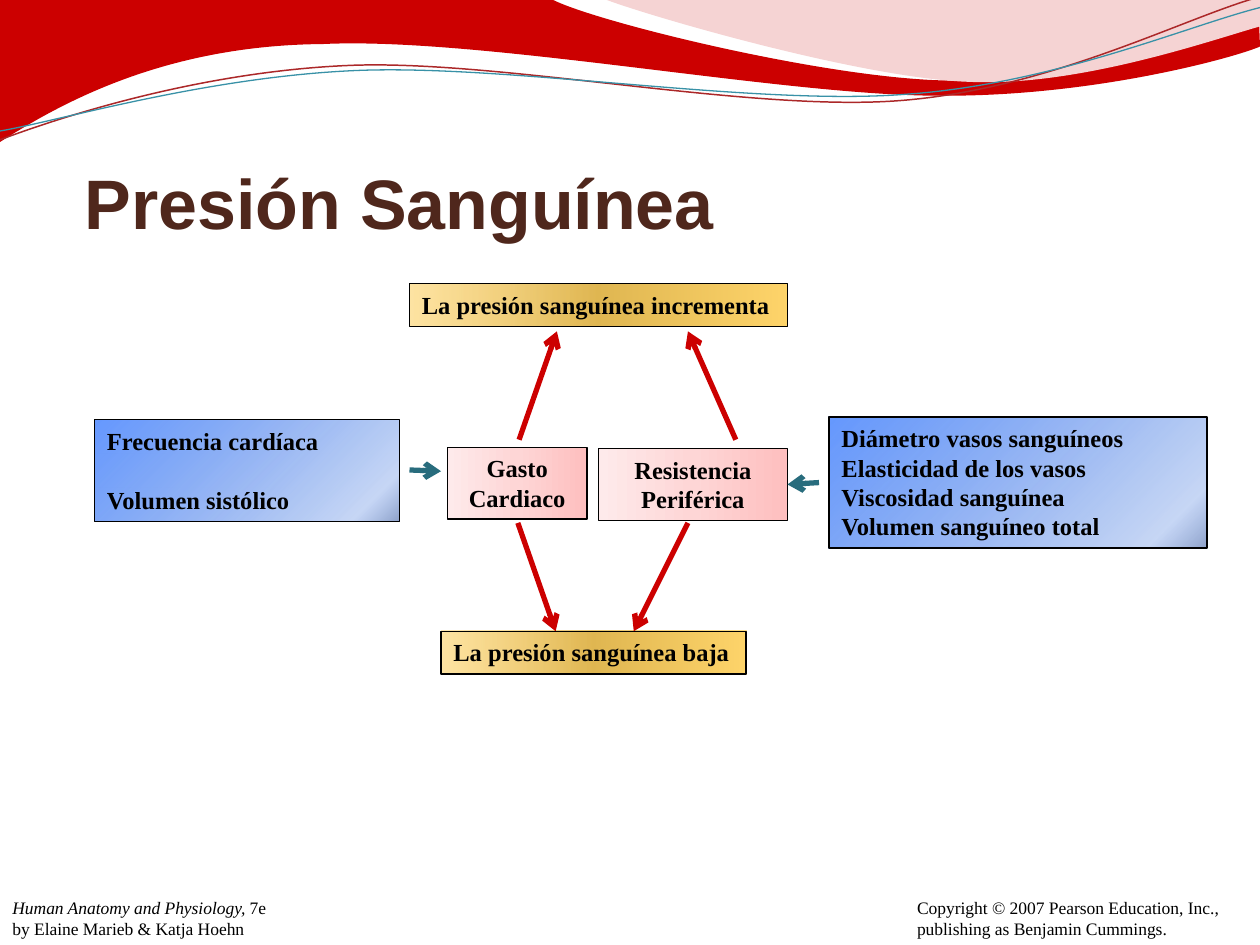
from dataclasses import dataclass

from lxml import etree
from pptx import Presentation
from pptx.dml.color import RGBColor
from pptx.enum.shapes import MSO_CONNECTOR, MSO_SHAPE
from pptx.enum.text import MSO_ANCHOR, PP_ALIGN
from pptx.oxml.ns import qn
from pptx.util import Emu, Pt

PX = 9144  # EMU per px, 100 px to the inch
RECT, STRAIGHT = MSO_SHAPE.RECTANGLE, MSO_CONNECTOR.STRAIGHT
LEFT, CENTER = PP_ALIGN.LEFT, PP_ALIGN.CENTER
TOP, MIDDLE = MSO_ANCHOR.TOP, MSO_ANCHOR.MIDDLE
RIGHT_SIDE = 3


@dataclass(frozen=True)
class Theme:
    red: str = "CC0000"
    pink: str = "F5D3D3"
    thin_red: str = "AC2829"
    thin_teal: str = "3891A7"
    teal: str = "286C7D"
    brown: str = "4F271C"
    black: str = "000000"
    sans: str = "Arial"
    serif: str = "Times New Roman"
    title_size: int = 40
    node_size: int = 14
    footer_size: int = 10
    # gradient stops: position %, colour, opacity %
    blue_stops: tuple = ((0, "35579C", 56), (12, "4C7EE1", 31), (100, "6699FF", 100))
    gold_stops: tuple = ((0, "FED46C", 62), (50, "E0B752", 100), (100, "FFD56B", 100))
    rose_stops: tuple = ((0, "FEBFBF", 100), (50, "FED6D6", 100), (100, "FEEAEB", 100))


T = Theme()


def rgb(color):
    return RGBColor.from_string(color)


def px(*values):
    return [Emu(v * PX) for v in values]


def write(sp, paragraphs, size, font=T.serif, color=T.black, bold=False, align=LEFT,
          anchor=TOP, wrap=True, insets=(10, 5, 10, 5), gap=0):
    """Each paragraph is a list of (text, italic) runs; gap is the space between them."""
    tf = sp.text_frame
    tf.word_wrap, tf.vertical_anchor = wrap, anchor
    tf.margin_left, tf.margin_top, tf.margin_right, tf.margin_bottom = px(*insets)
    for i, runs in enumerate(paragraphs):
        p = tf.add_paragraph() if i else tf.paragraphs[0]
        p.alignment = align
        if i and gap:
            p.space_before = Pt(gap)
        for text, italic in runs:
            r = p.add_run()
            r.text = text
            f = r.font
            f.name, f.size, f.bold, f.italic = font, Pt(size), bold, italic
            f.color.rgb = rgb(color)


def plain(*lines):
    return [[(line, False)] for line in lines]


def set_gradient(sp, stops, angle=None):
    """Linear at the given angle, or radial from the bottom right corner."""
    grad = etree.Element(qn("a:gradFill"), rotWithShape="1")
    gs_list = etree.SubElement(grad, qn("a:gsLst"))
    for pos, color, opacity in stops:
        gs = etree.SubElement(gs_list, qn("a:gs"), pos=str(pos * 1000))
        clr = etree.SubElement(gs, qn("a:srgbClr"), val=color)
        if opacity < 100:
            etree.SubElement(clr, qn("a:alpha"), val=str(opacity * 1000))
    if angle is None:
        radial = etree.SubElement(grad, qn("a:path"), path="circle")
        etree.SubElement(radial, qn("a:fillToRect"), l="100000", t="100000")
    else:
        etree.SubElement(grad, qn("a:lin"), ang=str(angle * 60000), scaled="0")
    sp._element.spPr.find(qn("a:prstGeom")).addnext(grad)


def add_node(slide, box, lines, stops, angle=None, align=LEFT, gap=0):
    sp = slide.shapes.add_shape(RECT, *px(*box))
    sp.shadow.inherit = False
    set_gradient(sp, stops, angle)
    sp.line.color.rgb, sp.line.width = rgb(T.black), Pt(0.75)
    write(sp, plain(*lines), T.node_size, bold=True, align=align, gap=gap)
    return sp


def add_arrow(slide, start, end, color):
    line = slide.shapes.add_connector(STRAIGHT, *px(*start, *end))
    line.line.color.rgb, line.line.width = rgb(color), Pt(3)
    etree.SubElement(line.line._get_or_add_ln(), qn("a:tailEnd"), type="arrow")
    etree.SubElement(line._element.spPr, qn("a:effectLst"))
    return line


def add_curve(slide, origin, start, segments, fill=None, line=None, width=0):
    """A segment of one point is a line, one of three points a Bézier curve."""
    x, y = origin
    points = [(x + a, y + b) for seg in segments for a, b in seg]
    fb = slide.shapes.build_freeform(x + start[0], y + start[1], scale=PX)
    fb.add_line_segments(points, close=fill is not None)
    sp = fb.convert_to_shape()
    sp.shadow.inherit = False
    steps = iter(list(sp._element.iter(qn("a:lnTo"))))
    for seg in segments:
        first = next(steps)
        if len(seg) == 3:
            first.tag = qn("a:cubicBezTo")
            for _ in range(2):
                step = next(steps)
                first.append(step[0])
                step.getparent().remove(step)
    if fill:
        sp.fill.solid()
        sp.fill.fore_color.rgb = rgb(fill)
        sp.line.fill.background()
    else:
        sp.fill.background()
        sp.line.color.rgb, sp.line.width = rgb(line), Pt(width)


def banner(slide, x, y):
    at = (x, y)
    # Filled waves
    add_curve(slide, at, (-1, 0), [
        [(439, 0)], [(475, 18), (662, 64), (757, 64)], [(852, 64), (957, 26), (999, 10)],
        [(1000, 37)], [(982, 45), (869, 77), (745, 76)], [(621, 76), (381, 29), (256, 35)],
        [(128, 36), (45, 84), (-2, 114)]], fill=T.red)
    add_curve(slide, at, (479, -1), [
        [(509, 11), (682, 62), (769, 65)], [(856, 69), (961, 32), (1000, 21)],
        [(1000, 0)]], fill=T.pink)
    # Thin waves
    add_curve(slide, at, (0, 111), [
        [(48, 93), (158, 57), (277, 52)], [(395, 47), (593, 89), (713, 80)],
        [(833, 71), (938, 15), (998, -2)]], line=T.thin_red, width=0.85)
    add_curve(slide, at, (0, 104), [
        [(47, 96), (164, 61), (283, 56)], [(403, 51), (597, 84), (717, 75)],
        [(836, 67), (941, 21), (1000, 6)]], line=T.thin_teal, width=0.75)


def title(slide, x, y, w, h):
    sp = slide.shapes.add_textbox(*px(x, y, w, h))
    write(sp, plain("Presión Sanguínea"), T.title_size, font=T.sans, color=T.brown,
          bold=True, anchor=MIDDLE, insets=(0, 0, 0, 4))


def diagram(slide, x, y):
    # Causes
    add_node(slide, (x, y + 108, 242, 81), ["Frecuencia cardíaca", "Volumen sistólico"],
             T.blue_stops, gap=17)
    add_node(slide, (x + 583, y + 106, 300, 104),
             ["Diámetro vasos sanguíneos", "Elasticidad de los vasos",
              "Viscosidad sanguínea", "Volumen sanguíneo total"], T.blue_stops)
    # Outcomes
    add_node(slide, (x + 275, y + 276, 242, 34), ["La presión sanguínea baja"],
             T.gold_stops, 0)
    add_node(slide, (x + 250, y, 300, 34), ["La presión sanguínea incrementa"],
             T.gold_stops, 0)
    # Factors
    add_node(slide, (x + 280, y + 130, 111, 57), ["Gasto Cardiaco"],
             T.rose_stops, 180, CENTER)
    resistance = add_node(slide, (x + 400, y + 131, 150, 57), ["Resistencia Periférica"],
                          T.rose_stops, 180, CENTER)
    # Arrows from causes to factors, then from factors to outcomes
    to_resistance = add_arrow(slide, (x + 575, y + 158), (x + 550, y + 160), T.teal)
    to_resistance.end_connect(resistance, RIGHT_SIDE)
    add_arrow(slide, (x + 250, y + 148), (x + 275, y + 149), T.teal)
    for x1, y1, x2, y2 in ((509, 124, 471, 38), (337, 124, 367, 38),
                           (336, 190, 366, 276), (471, 190, 428, 276)):
        add_arrow(slide, (x + x1, y + y1), (x + x2, y + y2), T.red)


def footer(slide, x, y):
    book = [[("Human Anatomy and Physiology,", True), (" 7e", False)],
            [("by Elaine Marieb & Katja Hoehn", False)]]
    rights = plain("Copyright © 2007 Pearson Education, Inc.,",
                   "publishing as Benjamin Cummings.")
    for left, width, paragraphs in ((0, 226, book), (718, 263, rights)):
        sp = slide.shapes.add_textbox(*px(x + left, y, width, 44))
        write(sp, paragraphs, T.footer_size, wrap=False)


def main():
    prs = Presentation()
    prs.slide_width, prs.slide_height = px(1000, 750)
    slide = prs.slides.add_slide(prs.slide_layouts[6])
    banner(slide, 0, 0)
    footer(slide, 0, 707)
    title(slide, 67, 117, 721, 90)
    diagram(slide, 75, 225)
    prs.save("out.pptx")


if __name__ == "__main__":
    main()
